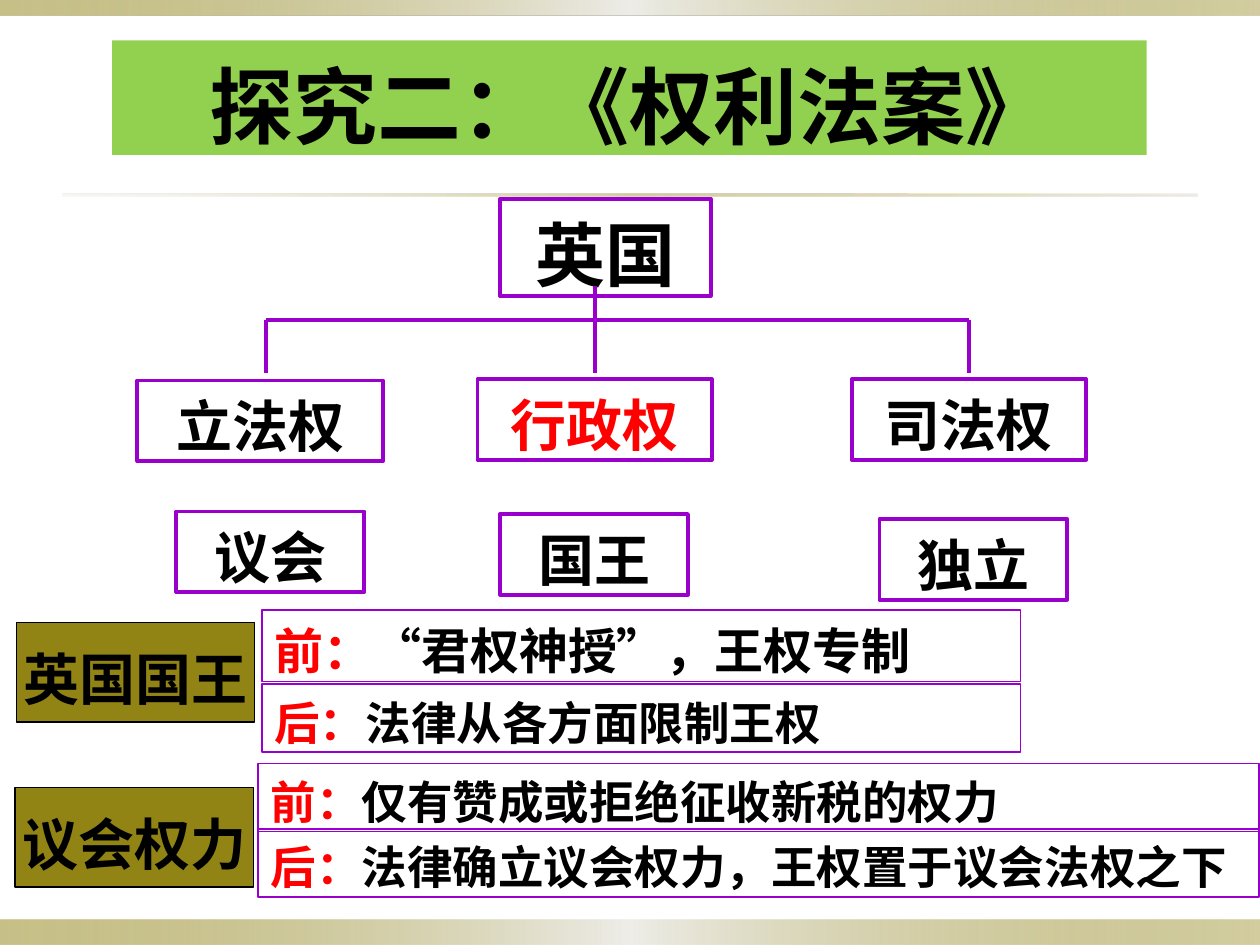
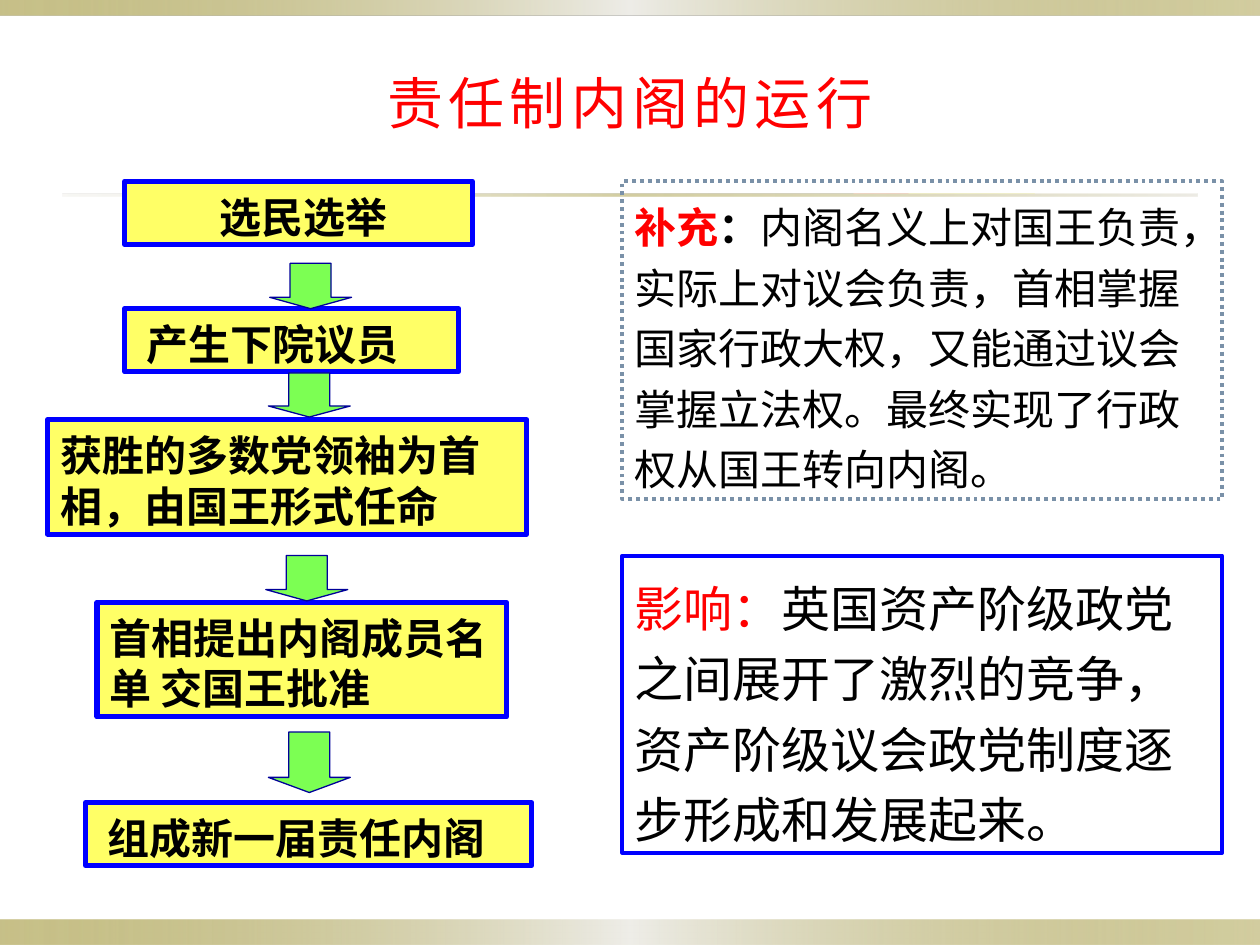
from lxml import etree
from pptx import Presentation
from pptx.dml.color import RGBColor
from pptx.enum.dml import MSO_LINE
from pptx.enum.shapes import MSO_CONNECTOR, MSO_SHAPE
from pptx.enum.text import MSO_ANCHOR, PP_ALIGN
from pptx.oxml.ns import qn
from pptx.util import Inches, Pt

RECT, DOWN_ARROW = MSO_SHAPE.RECTANGLE, MSO_SHAPE.DOWN_ARROW
STRAIGHT = MSO_CONNECTOR.STRAIGHT
LEFT, CENTER = PP_ALIGN.LEFT, PP_ALIGN.CENTER
TOP, MIDDLE = MSO_ANCHOR.TOP, MSO_ANCHOR.MIDDLE
DOTTED = MSO_LINE.ROUND_DOT

COLORS = {
    "black": "000000", "red": "FF0000", "purple": "9900CC", "green": "92D050",
    "olive": "918415", "silver": "EEEDE8", "sand": "DCD9CC", "yellow": "FFFF66",
    "blue": "0000FF", "navy": "000099", "lime": "7CFF53", "slate": "7A91A8",
}
SANS, CJK, CJK_TITLE = "Arial", "Noto Sans CJK SC", "Noto Sans CJK JP"

# The grid has 100 columns and 75 rows of square cells
prs = Presentation()
prs.slide_width, prs.slide_height = Inches(10), Inches(7.5)
CELL = prs.slide_width / 100


def add_panel(slide, at, fill=None, line=None, width=1, kind=RECT):
    """Add a preset shape; at is left, top, width, height in grid cells."""
    panel = slide.shapes.add_shape(kind, *(round(n * CELL) for n in at))
    panel.shadow.inherit = False
    if fill:
        panel.fill.solid()
        panel.fill.fore_color.rgb = RGBColor.from_string(COLORS[fill])
    else:
        panel.fill.background()
    if line:
        panel.line.color.rgb = RGBColor.from_string(COLORS[line])
        panel.line.width = Pt(width)
    else:
        panel.line.fill.background()
    return panel


def write(panel, parts, size, font=SANS, bold=True, align=CENTER, anchor=TOP,
          leading=1.2, tracking=0):
    """Fill a panel with one paragraph made of (text, colour) parts."""
    frame = panel.text_frame
    frame.word_wrap = True
    frame.vertical_anchor = anchor
    frame.margin_top = Inches(0.05) + Pt(size * 0.09)
    frame.margin_bottom = 0
    paragraph = frame.paragraphs[0]
    paragraph.alignment = align
    paragraph.line_spacing = Pt(size * leading)
    for text, color in parts:
        run = paragraph.add_run()
        run.text = text
        run.font.size, run.font.bold, run.font.name = Pt(size), bold, font
        run.font.color.rgb = RGBColor.from_string(COLORS[color])
        props = run.font._element
        etree.SubElement(props, qn("a:ea")).set("typeface", font)
        if tracking:
            props.set("spc", str(tracking * 100))


# Shared bands and rule: place and gradient stops (position, colour, opacity)
BAND = [(0, "olive", 50), (50, "silver", 100), (100, "olive", 40)]
RULE = [(0, "sand", 20), (50, "olive", 40), (100, "sand", 50)]
bill, cabinet = (prs.slides.add_slide(prs.slide_layouts[6]) for _ in range(2))
for slide in (bill, cabinet):
    for at, stops in [((0, 73, 100, 2), BAND), ((0, 0, 100, 1.2), BAND),
                      ((5, 15.4, 90, 0.2), RULE)]:
        band = add_panel(slide, at)
        gradient = etree.Element(qn("a:gradFill"), rotWithShape="1")
        stop_list = etree.SubElement(gradient, qn("a:gsLst"))
        for position, color, opacity in stops:
            stop = etree.SubElement(stop_list, qn("a:gs"), pos=str(position * 1000))
            tint = etree.SubElement(stop, qn("a:srgbClr"), val=COLORS[color])
            etree.SubElement(tint, qn("a:alpha"), val=str(opacity * 1000))
        etree.SubElement(gradient, qn("a:lin"), ang="0", scaled="1")
        no_fill = band._element.spPr.find(qn("a:noFill"))
        band._element.spPr.replace(no_fill, gradient)

# Slide 1: title
write(add_panel(bill, (8.9, 3.2, 82.1, 9.1), "green"),
      [("探究二：《权利法案》", "black")], 48, CJK_TITLE)

# Slide 1: tree of powers
write(add_panel(bill, (39.7, 15.8, 16.7, 7.7), line="purple", width=2.25),
      [("英国", "black")], 40)
fork, tips = 25.4, 29.6
branches = [(21.1, fork, 21.1, tips), (47.2, 22.7, 47.2, tips),
            (76.9, fork, 76.9, tips), (21.1, fork, 76.9, fork)]
for ends in branches:
    branch = bill.shapes.add_connector(STRAIGHT, *(round(n * CELL) for n in ends))
    branch.line.color.rgb = RGBColor.from_string(COLORS["purple"])
    branch.line.width = Pt(2.25)
    etree.SubElement(branch._element.spPr, qn("a:effectLst"))

powers = [
    ("立法权", "black", 10.9, 30.2, 19.5), ("行政权", "red", 37.9, 30.1, 18.6),
    ("司法权", "black", 67.6, 30.1, 18.6), ("议会", "black", 14, 40.6, 14.9),
    ("国王", "black", 39.7, 40.8, 14.9), ("独立", "black", 69.8, 41.2, 14.9),
]
for power, color, left, top, width in powers:
    write(add_panel(bill, (left, top, width, 6.4), line="purple", width=2.25),
          [(power, color)], 32)

# Slide 1: before and after
for holder, left, top in [("英国国王", 1.3, 49.4), ("议会权力", 1.2, 62.5)]:
    label = add_panel(bill, (left, top, 18.9, 7.9), "olive", "black", 0.75)
    write(label, [(holder, "black")], 32, anchor=MIDDLE)
    label.text_frame.word_wrap = False

changes = [
    ("前：", "“君权神授”，王权专制", 28, (20.8, 48.4, 60.2, 5.7)),
    ("后：", "法律从各方面限制王权", 26, (20.8, 54.3, 60.2, 5.4)),
    ("前：", "仅有赞成或拒绝征收新税的权力", 26, (20.5, 60.6, 79.4, 5.4)),
    ("后：", "法律确立议会权力，王权置于议会法权之下", 26, (20.5, 65.8, 79.4, 5.4)),
]
for moment, change, size, at in changes:
    write(add_panel(bill, at, line="purple"),
          [(moment, "red"), (change, "black")], size, CJK, align=LEFT)

# Slide 2: title
write(add_panel(cabinet, (12.7, 4.5, 74.6, 5.9)),
      [("责任制内阁的运行", "red")], 32, bold=False, tracking=3)

# Slide 2: supplement and influence
supplement = add_panel(cabinet, (49.4, 14.4, 47.6, 25.2), line="slate", width=2.25)
supplement.line.dash_style = DOTTED
write(supplement,
      [("补充", "red"), ("：", "black"),
       ("内阁名义上对国王负责，实际上对议会负责，首相掌握国家行政大权，"
        "又能通过议会掌握立法权。最终实现了行政权从国王转向内阁。", "black")],
      24, CJK, align=LEFT, leading=1.44)
supplement.text_frame.paragraphs[0].runs[-1].font.bold = False

influence = add_panel(cabinet, (49.4, 44.1, 47.6, 23.6), line="blue", width=2.25)
write(influence,
      [("影响：", "red"),
       ("英国资产阶级政党之间展开了激烈的竞争，资产阶级议会政党制度逐步形成和发展起来。",
        "black")],
      28, CJK, bold=False, align=LEFT, leading=1.44)

# Slide 2: steps of forming a cabinet
steps = [
    (" 选民选举", CENTER, (9.9, 14.4, 27.6, 5)),
    (" 产生下院议员", LEFT, (9.9, 24.5, 26.5, 5)),
    ("获胜的多数党领袖为首相，由国王形式任命", LEFT, (3.8, 33.3, 38, 9.1)),
    ("首相提出内阁成员名单 交国王批准", LEFT, (7.7, 47.8, 32.5, 9.1)),
    (" 组成新一届责任内阁", LEFT, (6.8, 63.7, 35.4, 5)),
]
for step, align, at in steps:
    write(add_panel(cabinet, at, "yellow", "blue", 3),
          [(step, "black")], 24, CJK, align=align)

for left, top, height in [(21.4, 20.9, 3.6), (21.3, 29.6, 3.5),
                          (21.1, 44.1, 3.6), (21.3, 58.1, 4.8)]:
    arrow = add_panel(cabinet, (left, top, 6.5, height), "lime", "navy", 0.75, DOWN_ARROW)
    arrow.adjustments[0] = 0.5
    arrow.adjustments[1] = 0.25

prs.save("out.pptx")
